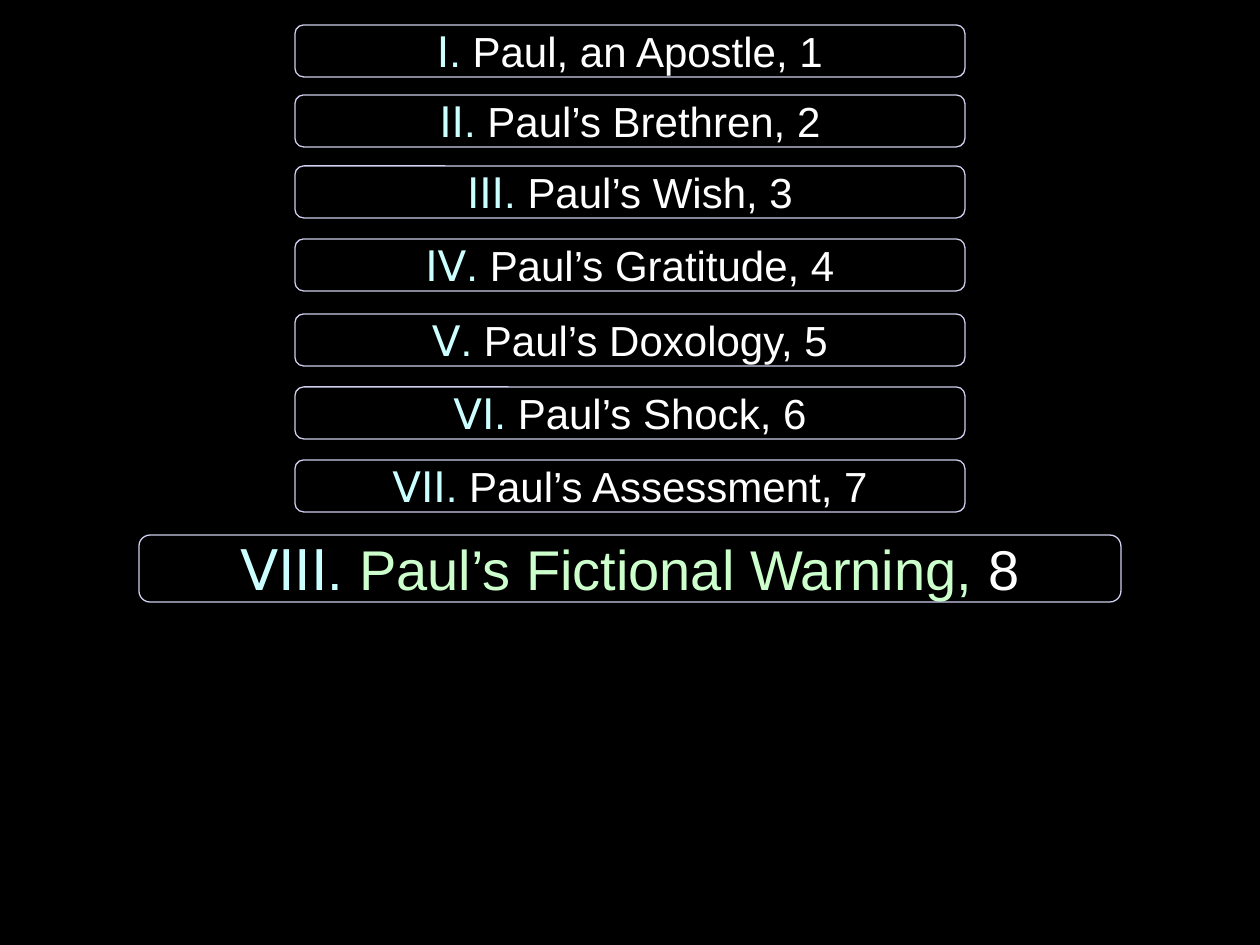
"""Build the outline slide of Paul's eight points."""
from dataclasses import dataclass

import pptx
import pptx.dml.color
import pptx.enum.shapes
import pptx.enum.text
import pptx.util

SLIDE_WIDTH, SLIDE_HEIGHT = 1260, 945
PX_PER_INCH = 126
BLACK, WHITE, LAVENDER = "000000", "FFFFFF", "CECEEF"
CYAN, GREEN = "CCFFFF", "CCFFCC"


@dataclass(frozen=True)
class Point:
    numeral: str
    heading: str
    verse: str
    top: int
    width: int = 670
    height: int = 52
    size: int = 24
    heading_color: str = WHITE


POINTS = [
    Point("I", "Paul, an Apostle, ", "1", 25),
    Point("II", "Paul’s Brethren, ", "2", 95),
    Point("III", "Paul’s Wish, ", "3", 166),
    Point("IV", "Paul’s Gratitude, ", "4", 239),
    Point("V", "Paul’s Doxology, ", "5", 314),
    Point("VI", "Paul’s Shock, ", "6", 387),
    Point("VII", "Paul’s Assessment, ", "7", 460),
    Point("VIII", "Paul’s Fictional Warning, ", "8", 535, 982, 67, 32, GREEN),
]


def px(length: int) -> int:
    return round(length * pptx.util.Inches(1) / PX_PER_INCH)


def rgb(value: str) -> pptx.dml.color.RGBColor:
    return pptx.dml.color.RGBColor.from_string(value)


def add_text(paragraph, text: str, *, size: int, color: str, font: str = "Arial") -> None:
    run = paragraph.add_run()
    run.text = text
    run.font.name = font
    run.font.size = pptx.util.Pt(size)
    run.font.color.rgb = rgb(color)


def draw_point(slide, point: Point) -> None:
    left = (SLIDE_WIDTH - point.width) // 2
    bar = slide.shapes.add_shape(
        pptx.enum.shapes.MSO_SHAPE.ROUNDED_RECTANGLE,
        px(left), px(point.top), px(point.width), px(point.height),
    )
    bar.shadow.inherit = False
    bar.fill.solid()
    bar.fill.fore_color.rgb = rgb(BLACK)
    bar.line.color.rgb = rgb(LAVENDER)
    bar.line.width = pptx.util.Pt(0.75)
    bar.text_frame.vertical_anchor = pptx.enum.text.MSO_ANCHOR.MIDDLE
    label = bar.text_frame.paragraphs[0]
    label.alignment = pptx.enum.text.PP_ALIGN.CENTER
    add_text(label, point.numeral, size=point.size, color=CYAN, font="DejaVu Sans")
    add_text(label, ". ", size=point.size, color=CYAN)
    add_text(label, point.heading, size=point.size, color=point.heading_color)
    add_text(label, point.verse, size=point.size, color=WHITE)


def main() -> None:
    deck = pptx.Presentation()
    deck.slide_width, deck.slide_height = px(SLIDE_WIDTH), px(SLIDE_HEIGHT)
    slide = deck.slides.add_slide(deck.slide_layouts[6])
    slide.background.fill.solid()
    slide.background.fill.fore_color.rgb = rgb(BLACK)
    for point in POINTS:
        draw_point(slide, point)
    deck.save("out.pptx")


if __name__ == "__main__":
    main()
